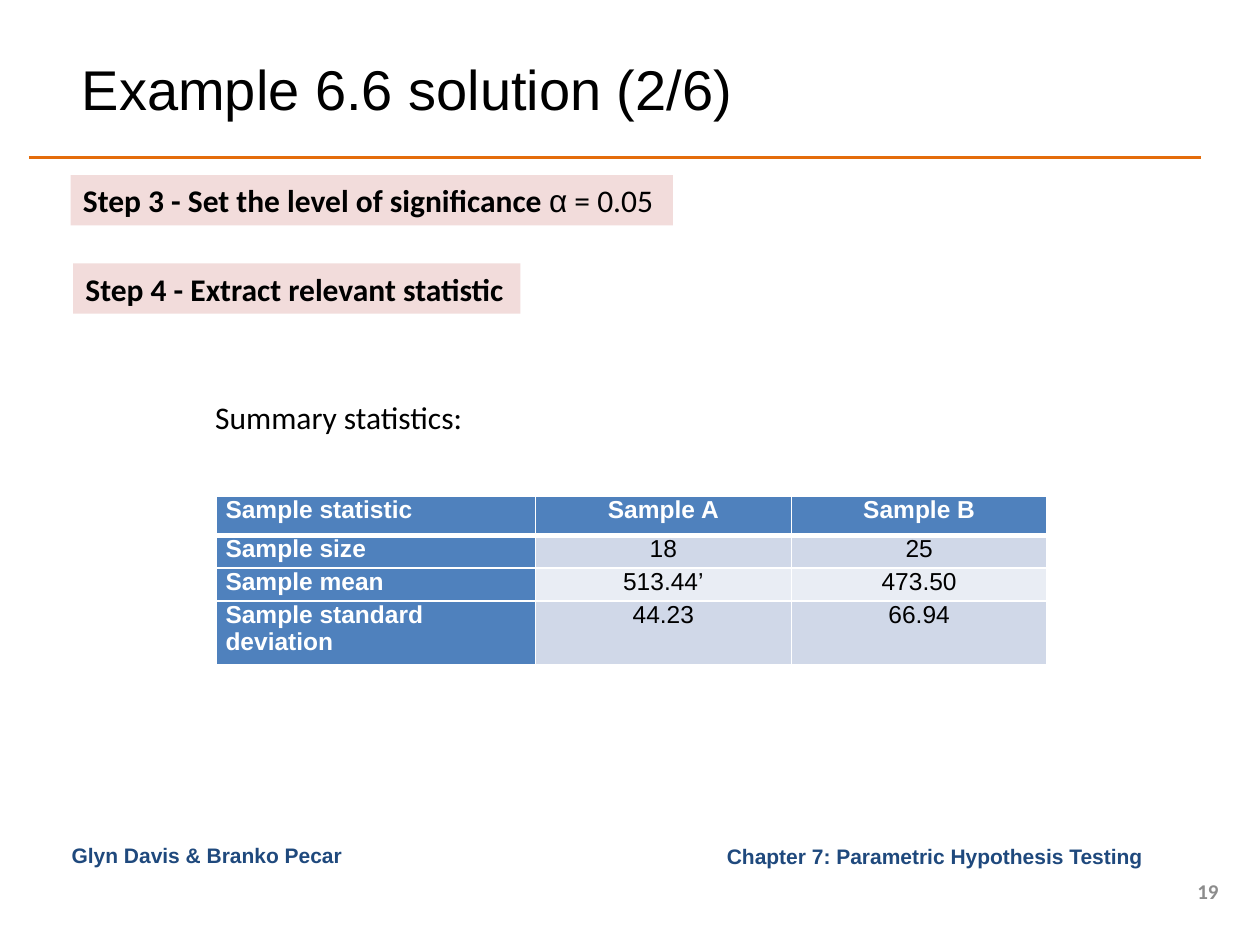
from lxml.etree import SubElement
from pptx import Presentation
from pptx.dml.color import RGBColor
from pptx.enum.shapes import MSO_CONNECTOR as Connector, MSO_SHAPE as Preset
from pptx.enum.text import MSO_ANCHOR as Anchor, PP_ALIGN as Align
from pptx.oxml.ns import qn
from pptx.util import Inches, Pt

COLORS = {
    "ink": "000000", "white": "FFFFFF", "rule": "E46C0A", "footer": "1F497D",
    "number": "8C8C8C", "step": "F2DCDB", "header": "4F81BD",
    "band_dark": "D0D8E8", "band_light": "E9EDF4",
}
WIDTH, HEIGHT = 10, 7.5
COLUMNS = (2.53, 2.03, 2.03)
ROWS = (0.31, 0.26, 0.26, 0.51)
STATISTICS = (
    ("Sample statistic", "Sample A", "Sample B"),
    ("Sample size", "18", "25"),
    ("Sample mean", "513.44’", "473.50"),
    ("Sample standard deviation", "44.23", "66.94"),
)
STEP = {"name": "Calibri", "size": Pt(18), "bold": True}
PLAIN = {**STEP, "bold": False}
FOOTER = {"name": "Arial", "size": Pt(12), "bold": True}


def color(name):
    return RGBColor.from_string(COLORS[name])


def set_values(target, values):
    for key, value in values.items():
        setattr(target, key, value)


def write(frame, spans, ink="ink", align=Align.LEFT):
    para = frame.paragraphs[0]
    para.alignment = align
    for words, font in spans:
        span = para.add_run()
        span.text = words
        set_values(span.font, font)
        span.font.color.rgb = color(ink)


def fill(target, name):
    target.fill.solid()
    target.fill.fore_color.rgb = color(name)


def add_title(page, words):
    title = page.shapes.title
    place = (0.55, 0.31, 8.94, 0.78)
    set_values(title, dict(zip(("left", "top", "width", "height"), map(Inches, place))))
    title.text_frame.vertical_anchor = Anchor.MIDDLE
    write(title.text_frame, [(words, {"name": "Arial", "size": Pt(32)})])


def add_rule(page):
    y = Inches(HEIGHT / 6)
    rule = page.shapes.add_connector(Connector.STRAIGHT, Inches(0.23), y, Inches(9.53), y)
    rule.line.color.rgb = color("rule")
    rule.line.width = Pt(2)
    SubElement(rule._element.spPr, qn("a:effectLst"))


def add_text(page, place, spans, ink="ink", align=Align.LEFT, anchor=Anchor.TOP):
    box = page.shapes.add_textbox(*map(Inches, place))
    set_values(box.text_frame, {"word_wrap": True, "vertical_anchor": anchor})
    write(box.text_frame, spans, ink, align)


def add_step(page, place, spans):
    box = page.shapes.add_shape(Preset.RECTANGLE, *map(Inches, place))
    box.shadow.inherit = False
    box.line.fill.background()
    fill(box, "step")
    set_values(box.text_frame, {"word_wrap": True, "vertical_anchor": Anchor.TOP})
    write(box.text_frame, spans)


def add_borders(cell, bottom):
    properties = cell._tc.get_or_add_tcPr()
    widths = {"lnL": 1, "lnR": 1, "lnT": 1, "lnB": bottom}
    for position, (side, width) in enumerate(widths.items()):
        line = properties.makeelement(qn(f"a:{side}"), {"w": str(Pt(width))})
        solid = SubElement(line, qn("a:solidFill"))
        SubElement(solid, qn("a:srgbClr"), val=COLORS["white"])
        properties.insert(position, line)


def add_statistics(page):
    place = (1.72, 3.94, sum(COLUMNS), sum(ROWS))
    frame = page.shapes.add_table(len(ROWS), len(COLUMNS), *map(Inches, place))
    table = frame.table
    for column, width in zip(table.columns, COLUMNS):
        column.width = Inches(width)
    margins = {"margin_left": Inches(0.07), "margin_right": Inches(0.07),
               "margin_top": 0, "margin_bottom": 0}
    for r, (height, values) in enumerate(zip(ROWS, STATISTICS)):
        table.rows[r].height = Inches(height)
        for c, value in enumerate(values):
            cell = table.cell(r, c)
            heading = r == 0 or c == 0
            band = "band_dark" if r % 2 else "band_light"
            set_values(cell, margins)
            fill(cell, "header" if heading else band)
            add_borders(cell, 3 if r == 0 else 1)
            font = {"name": "Arial", "size": Pt(14), "bold": heading}
            write(cell.text_frame, [(value, font)], "white" if heading else "ink",
                  Align.CENTER if c else Align.LEFT)


def main():
    deck = Presentation()
    set_values(deck, {"slide_width": Inches(WIDTH), "slide_height": Inches(HEIGHT)})
    page = deck.slides.add_slide(deck.slide_layouts[5])
    add_rule(page)
    add_title(page, "Example 6.6 solution (2/6)")
    add_step(page, (0.56, 1.39, 4.78, 0.4), [
        ("Step 3 - Set the level of significance ", STEP),
        ("α", {**PLAIN, "name": "Arial"}),
        (" = 0.05", PLAIN),
    ])
    add_step(page, (0.58, 2.09, 3.55, 0.4), [("Step 4 - Extract relevant statistic", STEP)])
    add_text(page, (1.61, 3.11, 2.2, 0.4), [("Summary statistics:", PLAIN)])
    add_statistics(page)
    add_text(page, (0.47, 6.64, 2.97, 0.31), [("Glyn Davis & Branko Pecar", FOOTER)], "footer")
    add_text(page, (3.75, 6.64, 5.42, 0.31),
             [("Chapter 7: Parametric Hypothesis Testing", FOOTER)],
             "footer", Align.RIGHT, Anchor.MIDDLE)
    add_text(page, (9.3, 6.95, 0.47, 0.24), [("19", {**FOOTER, "name": "Calibri"})],
             "number", Align.RIGHT, Anchor.MIDDLE)
    deck.save("out.pptx")


if __name__ == "__main__":
    main()
